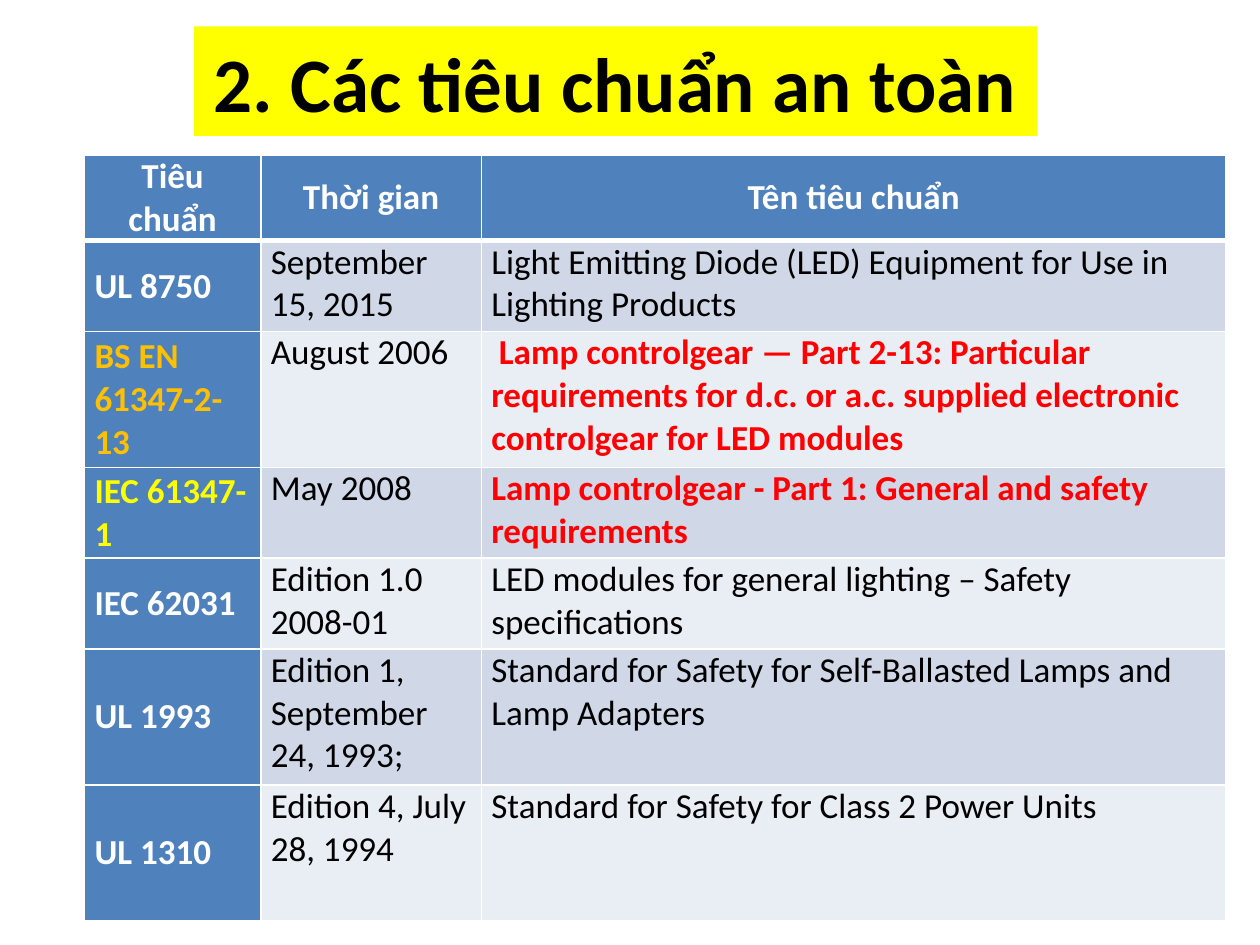
from dataclasses import dataclass

from lxml.etree import SubElement as Sub
from pptx import Presentation as Deck
from pptx.dml.color import RGBColor as RGB
from pptx.enum.shapes import MSO_SHAPE as Form
from pptx.enum.text import MSO_ANCHOR as Anchor, PP_ALIGN as Align
from pptx.oxml.ns import qn
from pptx.util import Inches, Pt


@dataclass(frozen=True)
class Theme:
    font: str = "Calibri"
    head: int = 44
    body: int = 20
    gap: int = 6
    black: str = "000000"
    white: str = "FFFFFF"
    blue: str = "4F81BD"
    yellow: str = "FFFF00"
    gold: str = "FFC000"
    red: str = "FF0000"
    bands: tuple = ("D0D8E8", "E9EDF4")


THEME = Theme()
LINE = 0.36
PAD = 0.08
INDENT = 0.06
COLS = (1.4, 1.75, 5.91)
LINES = (1, 2, 3, 2, 2, 3, 3)
HEADS = ("Tiêu chuẩn", "Thời gian", "Tên tiêu chuẩn")
ROWS = (
    ("UL 8750", "September 15, 2015",
     "Light Emitting Diode (LED) Equipment for Use in Lighting Products"),
    ("BS EN 61347-2-13", "August 2006",
     "Lamp controlgear — Part 2-13: Particular requirements for d.c. or a.c. "
     "supplied electronic controlgear for LED modules"),
    ("IEC 61347-1", "May 2008",
     "Lamp controlgear - Part 1: General and safety requirements"),
    ("IEC 62031", "Edition 1.0 2008-01",
     "LED modules for general lighting – Safety specifications"),
    ("UL 1993", "Edition 1, September 24, 1993;",
     "Standard for Safety for Self-Ballasted Lamps and Lamp Adapters"),
    ("UL 1310", "Edition 4, July 28, 1994",
     "Standard for Safety for Class 2 Power Units"),
)
CODES = {2: THEME.gold, 3: THEME.yellow}
KEYS = (2, 3)


def paint(item, tone):
    item.fill.solid()
    item.fill.fore_color.rgb = RGB.from_string(tone)


def write(frame, text, size, tone, bold, align):
    frame.text = text
    para = frame.paragraphs[0]
    para.alignment = align
    font = para.runs[0].font
    font.name, font.size, font.bold = THEME.font, Pt(size), bold
    font.color.rgb = RGB.from_string(tone)
    return para


def edge(cell, top, bottom):
    props = cell._tc.get_or_add_tcPr()
    for side, width in zip("LRTB", (1, 1, top, bottom)):
        line = Sub(props, qn(f"a:ln{side}"), w=str(Pt(width)))
        Sub(Sub(line, qn("a:solidFill")), qn("a:srgbClr"), val=THEME.white)


def look(row, col):
    if row == 0:
        return THEME.blue, THEME.white, True
    if col == 0:
        return THEME.blue, CODES.get(row, THEME.white), True
    key = col == 2 and row in KEYS
    return THEME.bands[(row - 1) % 2], THEME.red if key else THEME.black, key


def fill_cell(cell, row, col, text):
    back, tone, bold = look(row, col)
    edge(cell, 3 if row == 1 else 1, 3 if row == 0 else 1)
    paint(cell, back)
    cell.margin_left = cell.margin_right = Inches(PAD)
    cell.margin_top = cell.margin_bottom = 0
    cell.vertical_anchor = Anchor.MIDDLE if row == 0 or col == 0 else Anchor.TOP
    align = Align.CENTER if row == 0 else Align.LEFT
    para = write(cell.text_frame, text, THEME.body, tone, bold, align)
    para.space_before = para.space_after = Pt(THEME.gap)
    return para


def add_title(slide, text):
    box = slide.shapes.add_shape(
        Form.RECTANGLE, *map(Inches, (1.54, 0.21, 6.69, 0.87)))
    box.shadow.inherit = False
    box.line.fill.background()
    paint(box, THEME.yellow)
    box.text_frame.vertical_anchor = Anchor.MIDDLE
    write(box.text_frame, text, THEME.head, THEME.black, True, Align.CENTER)


def add_grid(slide):
    size = map(Inches, (0.67, 1.23, sum(COLS), LINE * sum(LINES)))
    table = slide.shapes.add_table(len(LINES), len(COLS), *size).table
    for col, width in zip(table.columns, COLS):
        col.width = Inches(width)
    for row, count in zip(table.rows, LINES):
        row.height = Inches(LINE * count)
    for row, texts in enumerate((HEADS, *ROWS)):
        for col, text in enumerate(texts):
            para = fill_cell(table.cell(row, col), row, col, text)
            if (row, col) == (2, 2):
                para._p.get_or_add_pPr().set("indent", str(Inches(INDENT)))


def main():
    deck = Deck()
    deck.slide_width, deck.slide_height = Inches(10), Inches(7.5)
    slide = deck.slides.add_slide(deck.slide_layouts[6])
    add_title(slide, "2. Các tiêu chuẩn an toàn")
    add_grid(slide)
    deck.save("out.pptx")


if __name__ == "__main__":
    main()
